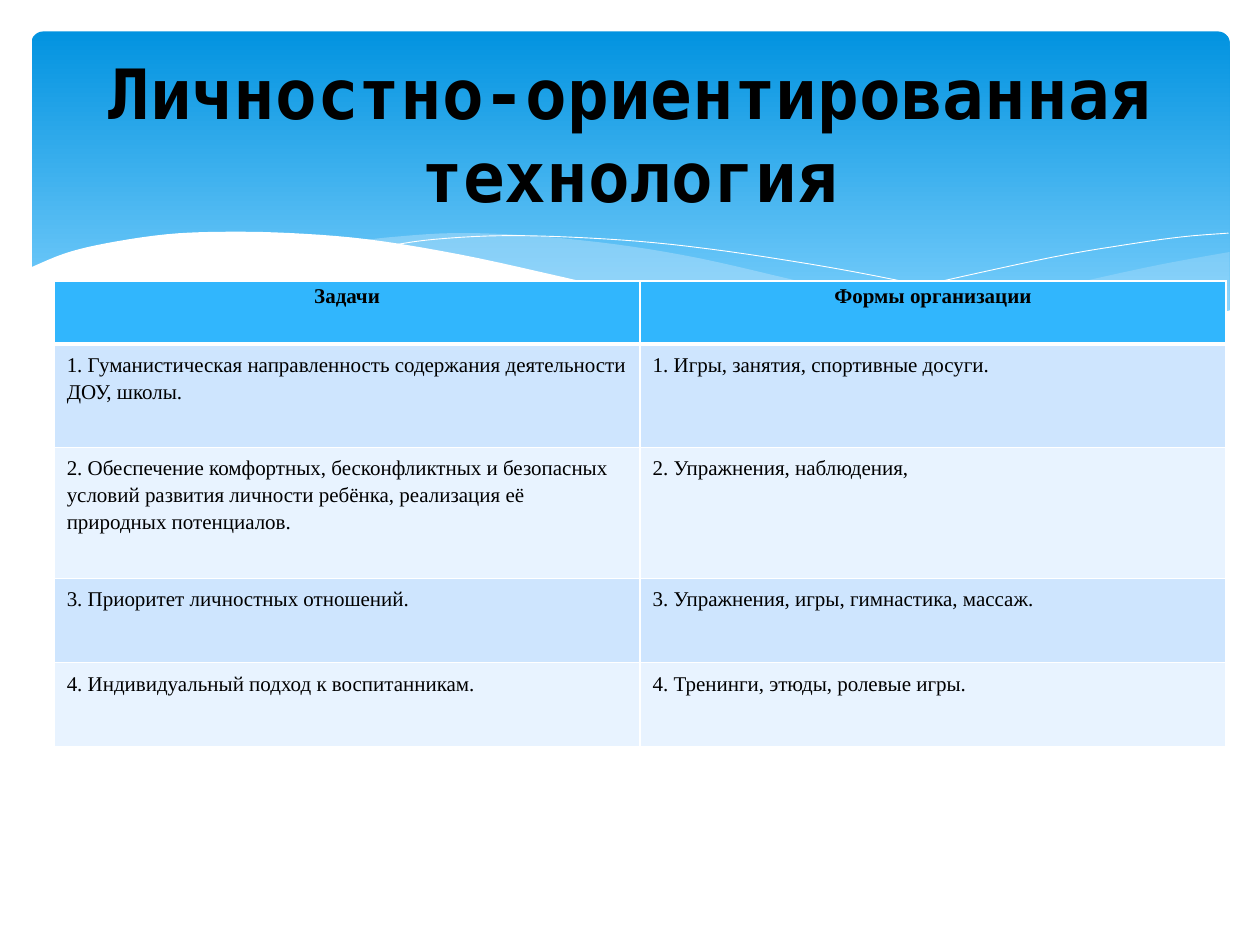
import pptx
import pptx.util
import pptx.dml.color
import pptx.enum.shapes
import pptx.enum.text
import pptx.oxml
import pptx.oxml.ns

Inches, Pt = pptx.util.Inches, pptx.util.Pt
RGBColor = pptx.dml.color.RGBColor
PP_ALIGN = pptx.enum.text.PP_ALIGN
ANCHOR = pptx.enum.text.MSO_ANCHOR

# Content
TITLE = "Личностно-ориентированная технология"
ROWS = [
    ("Задачи", "Формы организации"),
    ("1. Гуманистическая направленность содержания деятельности ДОУ, школы.",
     "1. Игры, занятия, спортивные досуги."),
    ("2. Обеспечение комфортных, бесконфликтных и безопасных условий развития "
     "личности ребёнка, реализация её природных потенциалов.",
     "2. Упражнения, наблюдения,"),
    ("3. Приоритет личностных отношений.",
     "3. Упражнения, игры, гимнастика, массаж."),
    ("4. Индивидуальный подход к воспитанникам.",
     "4. Тренинги, этюды, ролевые игры."),
]
ROW_HEIGHTS = [0.5, 0.82, 1.04, 0.67, 0.67]
COL_WIDTH = 4.65

# Colours and fonts
BLACK = RGBColor(0x00, 0x00, 0x00)
WHITE = RGBColor(0xFF, 0xFF, 0xFF)
SKY_TOP = RGBColor(0x02, 0x93, 0xE0)
SKY_BOTTOM = RGBColor(0x83, 0xD3, 0xFE)
MIST = RGBColor(0xC6, 0xE7, 0xFC)
HEADER = RGBColor(0x31, 0xB6, 0xFD)
BANDS = [RGBColor(0xE8, 0xF3, 0xFF), RGBColor(0xCE, 0xE5, 0xFE)]
TITLE_FONT, TABLE_FONT = "DejaVu Sans Mono", "Times New Roman"

# Waves: each is a list of smooth curves joined by corners, in inches
RIGHT_MIST = [
    [(9.76, 2), (9.21, 2.1), (8.61, 2.23), (7.79, 2.42), (7.06, 2.57), (6.61, 2.65)],
    [(6.61, 2.65), (7.19, 2.72), (7.69, 2.77), (8.14, 2.78), (8.63, 2.75),
     (9.05, 2.69), (9.42, 2.59), (9.76, 2.47)],
]
MIDDLE_MIST = [
    [(8.93, 2.73), (8.07, 2.6), (7.06, 2.4), (6.29, 2.22), (5.55, 2.05),
     (4.89, 1.94), (4.2, 1.87), (3.61, 1.85), (3.13, 1.88), (2.86, 1.91)],
    [(2.86, 1.91), (3.62, 2.03), (4.49, 2.22), (5.3, 2.4), (6.01, 2.55),
     (6.65, 2.66), (7.22, 2.74), (7.85, 2.78), (8.38, 2.78), (8.93, 2.73)],
]
LONG_LINE = [[(3.09, 1.95), (3.44, 1.9), (4.01, 1.87), (4.69, 1.89), (5.33, 1.94),
              (6.08, 2.04), (6.95, 2.19), (7.95, 2.41), (9.07, 2.72)]]
RIGHT_LINE = [[(6.13, 2.57), (6.72, 2.41), (7.48, 2.23), (8.36, 2.04),
               (8.95, 1.94), (9.38, 1.88), (9.75, 1.85)]]
WHITE_WAVE = [
    [(9.77, 2.46), (9.3, 2.62), (8.75, 2.73), (8.09, 2.77), (7.26, 2.72),
     (6.48, 2.62), (5.55, 2.45), (4.47, 2.2), (3.65, 2.02), (2.92, 1.9),
     (2.3, 1.85), (1.77, 1.84), (1.32, 1.86), (0.85, 1.93), (0.52, 2.01), (0.23, 2.13)],
    [(0.23, 3.29), (9.77, 3.29)],
]
# curves, fill, opacity in percent (no fill means a white line)
WAVES = [
    (RIGHT_MIST, MIST, 29),
    (MIDDLE_MIST, MIST, 40),
    (LONG_LINE, None, 100),
    (RIGHT_LINE, None, 100),
    (WHITE_WAVE, WHITE, 100),
]


def smooth(points, steps=5):
    """Points along a Catmull-Rom curve through the given points."""
    if len(points) < 3:
        return points
    ext = [points[0]] + points + [points[-1]]
    curve = [points[0]]
    for a, b, c, d in zip(ext, ext[1:], ext[2:], ext[3:]):
        for t in (i / steps for i in range(1, steps + 1)):
            curve.append(tuple(
                (2 * q + (r - p) * t + (2 * p - 5 * q + 4 * r - u) * t ** 2
                 + (3 * q - p - 3 * r + u) * t ** 3) / 2
                for p, q, r, u in zip(a, b, c, d)))
    return curve


def add_wave(s, curves, fill, opacity):
    points = [(Inches(x), Inches(y)) for curve in curves for x, y in smooth(curve)]
    builder = s.shapes.build_freeform(*points[0])
    builder.add_line_segments(points[1:], close=fill is not None)
    sp = builder.convert_to_shape()
    sp.shadow.inherit = False
    if fill is None:
        sp.fill.background()
        sp.line.color.rgb = WHITE
        sp.line.width = Pt(0.5)
        return
    sp.fill.solid()
    sp.fill.fore_color.rgb = fill
    sp.line.fill.background()
    if opacity < 100:
        color = sp._element.spPr.find(".//" + pptx.oxml.ns.qn("a:srgbClr"))
        color.append(pptx.oxml.parse_xml(
            f'<a:alpha {pptx.oxml.ns.nsdecls("a")} val="{opacity * 1000}"/>'))


def add_borders(cell, widths):
    tcPr = cell._tc.get_or_add_tcPr()
    for side, width in widths.items():
        tcPr.append(pptx.oxml.parse_xml(
            f'<a:ln{side} {pptx.oxml.ns.nsdecls("a")} w="{Pt(width)}">'
            f'<a:solidFill><a:srgbClr val="{WHITE}"/></a:solidFill></a:ln{side}>'))


def add_text(p, text, font, size, bold):
    r = p.add_run()
    r.text = text
    r.font.name, r.font.size, r.font.bold = font, Pt(size), bold
    r.font.color.rgb = BLACK


prs = pptx.Presentation()
prs.slide_width, prs.slide_height = Inches(10), Inches(7.5)
s = prs.slides.add_slide(prs.slide_layouts[5])

# Sky panel
sp = s.shapes.add_shape(pptx.enum.shapes.MSO_SHAPE.ROUNDED_RECTANGLE,
                        Inches(0.25), Inches(0.25), Inches(9.51), Inches(2.7))
sp.adjustments[0] = 0.034
sp.shadow.inherit = False
sp.line.fill.background()
sp.fill.gradient()
sp.fill.gradient_angle = 270
for stop, color, position in zip(sp.fill.gradient_stops, (SKY_TOP, SKY_BOTTOM), (0, 0.9)):
    stop.color.rgb, stop.position = color, position

for wave in WAVES:
    add_wave(s, *wave)

# Table
table = s.shapes.add_table(len(ROWS), 2, Inches(0.43), Inches(2.23),
                           Inches(2 * COL_WIDTH), Inches(sum(ROW_HEIGHTS))).table
for col in table.columns:
    col.width = Inches(COL_WIDTH)
for i, texts in enumerate(ROWS):
    table.rows[i].height = Inches(ROW_HEIGHTS[i])
    is_header = i == 0
    for j, text in enumerate(texts):
        cell = table.cell(i, j)
        add_borders(cell, {"L": 1, "R": 1, "T": 3 if i == 1 else 1,
                           "B": 3 if is_header else 1})
        cell.fill.solid()
        cell.fill.fore_color.rgb = HEADER if is_header else BANDS[i % 2]
        cell.vertical_anchor = ANCHOR.TOP
        p = cell.text_frame.paragraphs[0]
        p.line_spacing = 1.15
        if is_header:
            cell.margin_left = cell.margin_right = Inches(0.08)
            cell.margin_top = cell.margin_bottom = 0
            p.alignment = PP_ALIGN.CENTER
        add_text(p, text, TABLE_FONT, 12, is_header)

# Title, in front of the panel
title = s.shapes.title
title.left, title.top = Inches(0.5), Inches(0.37)
title.width, title.height = Inches(9), Inches(1.37)
tf = title.text_frame
tf.word_wrap = True
tf.auto_size = pptx.enum.text.MSO_AUTO_SIZE.NONE
tf.vertical_anchor = ANCHOR.MIDDLE
tf.paragraphs[0].alignment = PP_ALIGN.CENTER
add_text(tf.paragraphs[0], TITLE, TITLE_FONT, 39.6, True)
s.shapes._spTree.append(title._element)

prs.save("out.pptx")
